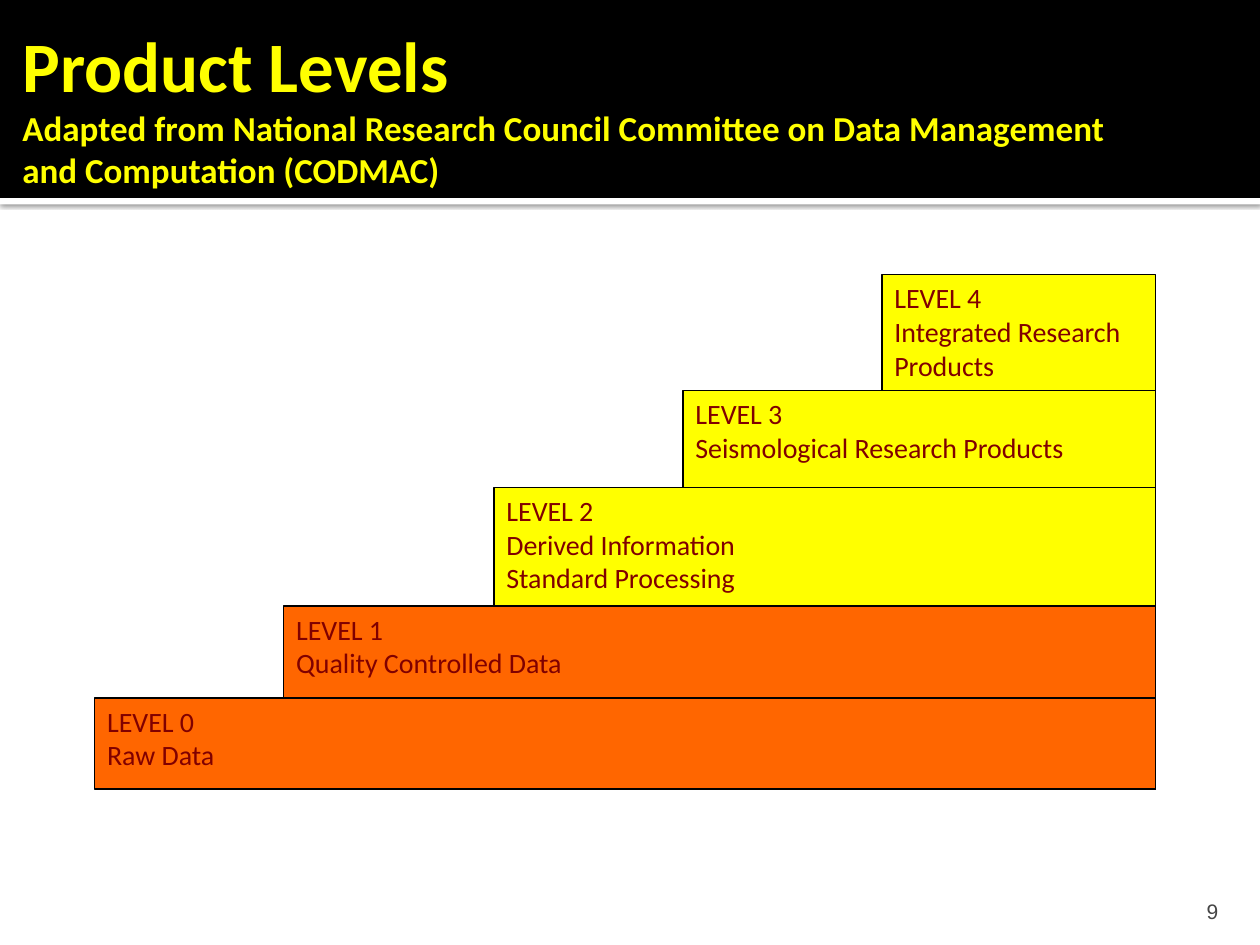
from lxml.etree import SubElement
from pptx import Presentation
from pptx.dml.color import RGBColor
from pptx.enum.shapes import MSO_SHAPE as Preset
from pptx.enum.text import MSO_ANCHOR as Anchor, MSO_AUTO_SIZE as AutoSize, PP_ALIGN as Align
from pptx.oxml.ns import qn
from pptx.util import Cm, Pt

SLIDE_WIDTH, SLIDE_HEIGHT = 25.4, 19.05
STAIR_RIGHT, STAIR_BOTTOM = 23.29, 15.91
YELLOW, ORANGE, MAROON = "FFFF00", "FF6600", "800000"
LEVELS = [
    (17.78, 5.54, YELLOW, ["LEVEL 4", "Integrated Research Products"]),
    (13.77, 7.87, YELLOW, ["LEVEL 3", "Seismological Research Products"]),
    (9.96, 9.83, YELLOW, ["LEVEL 2", "Derived Information", "Standard Processing"]),
    (5.72, 12.22, ORANGE, ["LEVEL 1", "Quality Controlled Data"]),
    (1.91, 14.07, ORANGE, ["LEVEL 0", "Raw Data"]),
]


def color(hex_value):
    return RGBColor.from_string(hex_value)


def add_run(paragraph, text, size, hex_value, font="Calibri", bold=False):
    run = paragraph.add_run()
    run.text = text
    run.font.name = font
    run.font.size = Pt(size)
    run.font.bold = bold
    run.font.color.rgb = color(hex_value)


def add_rectangle(slide, left, top, width, height, fill):
    rectangle = slide.shapes.add_shape(
        Preset.RECTANGLE, Cm(left), Cm(top), Cm(width), Cm(height))
    rectangle.shadow.inherit = False
    rectangle.fill.solid()
    rectangle.fill.fore_color.rgb = color(fill)
    return rectangle


def add_band(slide, top, height, fill):
    band = add_rectangle(slide, 0, top, SLIDE_WIDTH, height, fill)
    band.line.fill.background()
    slide.shapes.title.element.addprevious(band.element)
    return band


def add_drop_shadow(band):
    effects = band.element.spPr.find(qn("a:effectLst"))
    shadow = SubElement(effects, qn("a:outerShdw"), blurRad=str(Pt(2.5)),
                        dist=str(Pt(0.8)), dir="5400000", rotWithShape="0")
    tint = SubElement(shadow, qn("a:srgbClr"), val="000000")
    SubElement(tint, qn("a:alpha"), val="60000")


def add_level(slide, left, top, fill, lines):
    step = add_rectangle(slide, left, top, STAIR_RIGHT - left, STAIR_BOTTOM - top, fill)
    step.line.color.rgb = color("000000")
    step.line.width = Pt(0.75)
    frame = step.text_frame
    frame.word_wrap = True
    frame.vertical_anchor = Anchor.TOP
    for index, line in enumerate(lines):
        paragraph = frame.add_paragraph() if index else frame.paragraphs[0]
        paragraph.alignment = Align.LEFT
        add_run(paragraph, line, 16, MAROON)


def fill_title(title, heading, source):
    title.left, title.top, title.width, title.height = Cm(0.2), Cm(0.3), Cm(22.86), Cm(1.78)
    frame = title.text_frame
    frame.auto_size = AutoSize.NONE
    frame.word_wrap = True
    frame.vertical_anchor = Anchor.TOP
    frame.margin_left = Cm(0.25)
    frame.margin_top = frame.margin_right = frame.margin_bottom = Cm(0.13)
    paragraph = frame.paragraphs[0]
    paragraph.alignment = Align.LEFT
    add_run(paragraph, heading, 40.5, YELLOW, bold=True)
    paragraph.add_line_break()
    add_run(paragraph, source, 20, YELLOW, bold=True)


def add_page_number(slide, number):
    page_box = slide.shapes.add_textbox(Cm(22.78), Cm(17.98), Cm(2.03), Cm(0.76))
    page_box.text_frame.word_wrap = True
    paragraph = page_box.text_frame.paragraphs[0]
    paragraph.alignment = Align.RIGHT
    add_run(paragraph, number, 12, "454545", font="Arial")


def main():
    deck = Presentation()
    deck.slide_width, deck.slide_height = Cm(SLIDE_WIDTH), Cm(SLIDE_HEIGHT)
    slide = deck.slides.add_slide(deck.slide_layouts.get_by_name("Title Only"))
    add_drop_shadow(add_band(slide, 3.99, 0.13, "FFFFFF"))
    add_band(slide, 0, 3.99, "000000")
    fill_title(slide.shapes.title, "Product Levels",
               "Adapted from National Research Council Committee on "
               "Data Management and Computation (CODMAC)")
    for level in LEVELS:
        add_level(slide, *level)
    add_page_number(slide, "9")
    deck.save("out.pptx")


if __name__ == "__main__":
    main()
